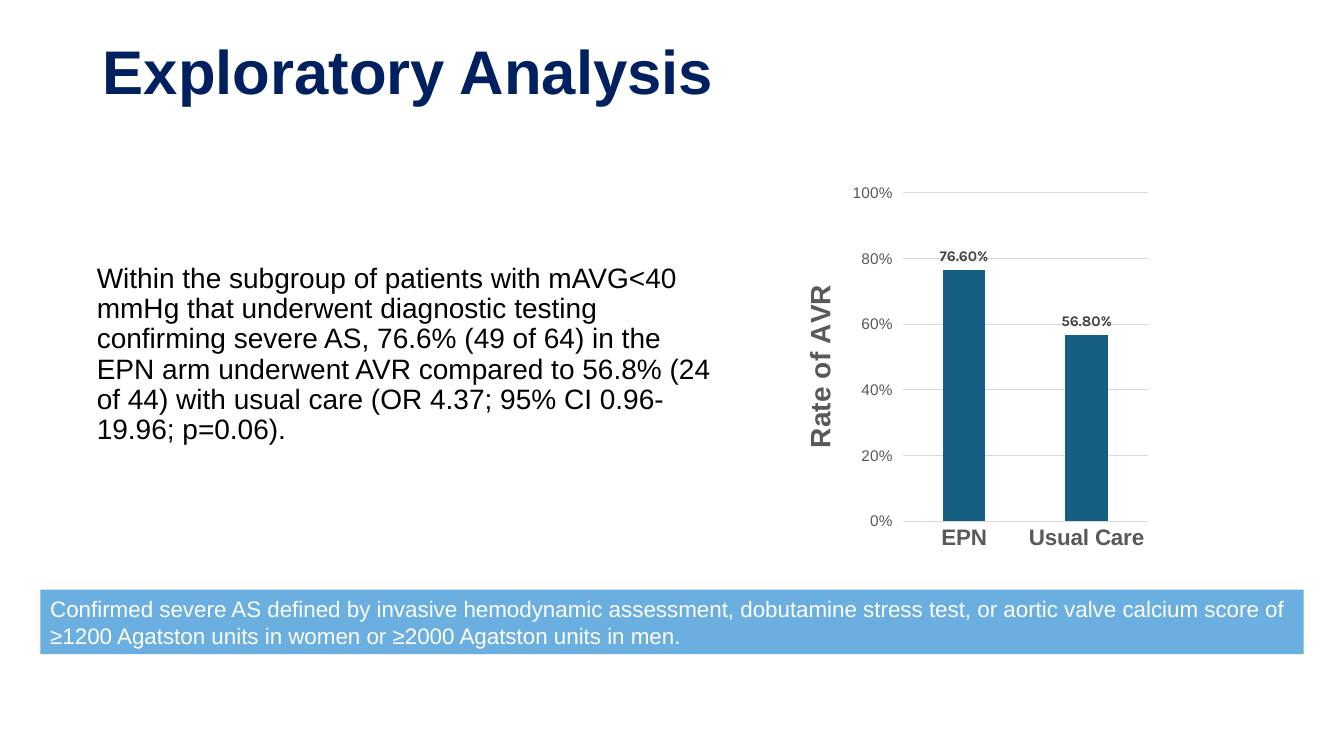
from lxml import etree
from pptx import Presentation
from pptx.chart.data import CategoryChartData
from pptx.dml.color import RGBColor
from pptx.enum.chart import XL_CHART_TYPE as CHART, XL_LABEL_POSITION as LABEL, XL_TICK_MARK as TICK
from pptx.enum.shapes import MSO_SHAPE as SHAPE
from pptx.enum.text import MSO_ANCHOR as ANCHOR, MSO_AUTO_SIZE as FIT, PP_ALIGN as ALIGN
from pptx.oxml.ns import qn
from pptx.util import Inches, Pt

# Content
TITLE = "Exploratory Analysis"
FINDING = ("Within the subgroup of patients with mAVG<40 mmHg that underwent diagnostic testing "
           "confirming severe AS, 76.6% (49 of 64) in the EPN arm underwent AVR compared to "
           "56.8% (24 of 44) with usual care (OR 4.37; 95% CI 0.96-19.96; p=0.06).")
DEFINITION = ("Confirmed severe AS defined by invasive hemodynamic assessment, dobutamine stress "
              "test, or aortic valve calcium score of ≥1200 Agatston units in women or "
              "≥2000 Agatston units in men.")
AXIS_TITLE = "Rate of AVR"
AVR_RATES = {"EPN": 0.766, "Usual Care": 0.568}

# Places: left, top, width, height in inches
TITLE_BOX = (0.92, 0.01, 11.5, 1.45)
FINDING_BOX = (0.86, 2.57, 6.31, 1.9)
DEFINITION_BOX = (0.4, 5.85, 12.53, 0.64)
CHART_BOX = (7.72, 1.76, 3.74, 3.79)
PLOT_LAYOUT = {"x": 0.33, "y": 0.04, "w": 0.65, "h": 0.86}  # shares of the chart

NAVY = RGBColor(0x00, 0x20, 0x60)
BLACK = RGBColor(0x00, 0x00, 0x00)
WHITE = RGBColor(0xFF, 0xFF, 0xFF)
SKY = RGBColor(0x6B, 0xAF, 0xE0)
TEAL = RGBColor(0x15, 0x60, 0x82)
GRAY = RGBColor(0x59, 0x59, 0x59)
DARK_GRAY = RGBColor(0x40, 0x40, 0x40)
GRID = RGBColor(0xD9, 0xD9, 0xD9)


def set_font(font, size, color, bold=False, name="Arial"):
    font.name, font.size, font.bold = name, Pt(size), bold
    font.color.rgb = color


def write(tf, text, size, color, bold=False, anchor=ANCHOR.TOP, spacing=None):
    tf.word_wrap, tf.auto_size, tf.vertical_anchor = True, FIT.NONE, anchor
    p = tf.paragraphs[0]
    p.alignment, p.line_spacing, p.space_before = ALIGN.LEFT, spacing, Pt(0)
    r = p.add_run()
    r.text = text
    set_font(r.font, size, color, bold)
    return p


def place(sp, box):
    sp.left, sp.top, sp.width, sp.height = map(Inches, box)


def set_line(line, color):
    line.color.rgb, line.width = color, Pt(0.75)


prs = Presentation()
prs.slide_width, prs.slide_height = Inches(13.33), Inches(7.5)
slide = prs.slides.add_slide(prs.slide_layouts[1])

# Title and finding
title, body = slide.placeholders
place(title, TITLE_BOX)
write(title.text_frame, TITLE, 44, NAVY, bold=True, anchor=ANCHOR.MIDDLE, spacing=0.9)
place(body, FINDING_BOX)
p = write(body.text_frame, FINDING, 20, BLACK, spacing=0.9)
pPr = p._p.get_or_add_pPr()
pPr.set("marL", "0")
pPr.set("indent", "0")
etree.SubElement(pPr, qn("a:buNone"))

# Definition band
band = slide.shapes.add_shape(SHAPE.RECTANGLE, *map(Inches, DEFINITION_BOX))
band.shadow.inherit = False
band.fill.solid()
band.fill.fore_color.rgb = SKY
band.line.fill.background()
write(band.text_frame, DEFINITION, 16, WHITE, anchor=ANCHOR.MIDDLE)

# Chart
data = CategoryChartData()
data.categories = list(AVR_RATES)
data.add_series("Series 1", list(AVR_RATES.values()), number_format="0.00%")
chart = slide.shapes.add_chart(CHART.COLUMN_CLUSTERED, *map(Inches, CHART_BOX), data).chart
chart.has_legend = chart.has_title = False
set_font(chart.font, 10, BLACK, name="Karla")

plot = chart.plots[0]
plot.gap_width, plot.vary_by_categories = 189, False
fill = plot.series[0].format.fill
fill.solid()
fill.fore_color.rgb = TEAL
plot.has_data_labels = True
labels = plot.data_labels
labels.show_value, labels.position = True, LABEL.OUTSIDE_END
labels.number_format, labels.number_format_is_linked = "0.00%", False
set_font(labels.font, 10.5, DARK_GRAY, bold=True, name="Karla")

# Axes
cat_axis, val_axis = chart.category_axis, chart.value_axis
cat_axis.major_tick_mark = TICK.NONE
set_line(cat_axis.format.line, GRID)
set_font(cat_axis.tick_labels.font, 16, GRAY, bold=True)
val_axis.minimum_scale, val_axis.maximum_scale, val_axis.major_unit = 0, 1, 0.2
val_axis.format.line.fill.background()
set_line(val_axis.major_gridlines.format.line, GRID)
ticks = val_axis.tick_labels
ticks.number_format, ticks.number_format_is_linked = "0%", False
set_font(ticks.font, 11, GRAY)
r = val_axis.axis_title.text_frame.paragraphs[0].add_run()
r.text = AXIS_TITLE
set_font(r.font, 20, GRAY, bold=True)

# Fixed inner plot area
area = chart._chartSpace.chart.plotArea
for old in area.findall(qn("c:layout")):
    area.remove(old)
layout = etree.Element(qn("c:layout"))
area.insert(0, layout)
manual = etree.SubElement(layout, qn("c:manualLayout"))
settings = {"layoutTarget": "inner", "xMode": "edge", "yMode": "edge", **PLOT_LAYOUT}
for tag, value in settings.items():
    etree.SubElement(manual, qn(f"c:{tag}")).set("val", str(value))

prs.save("out.pptx")
